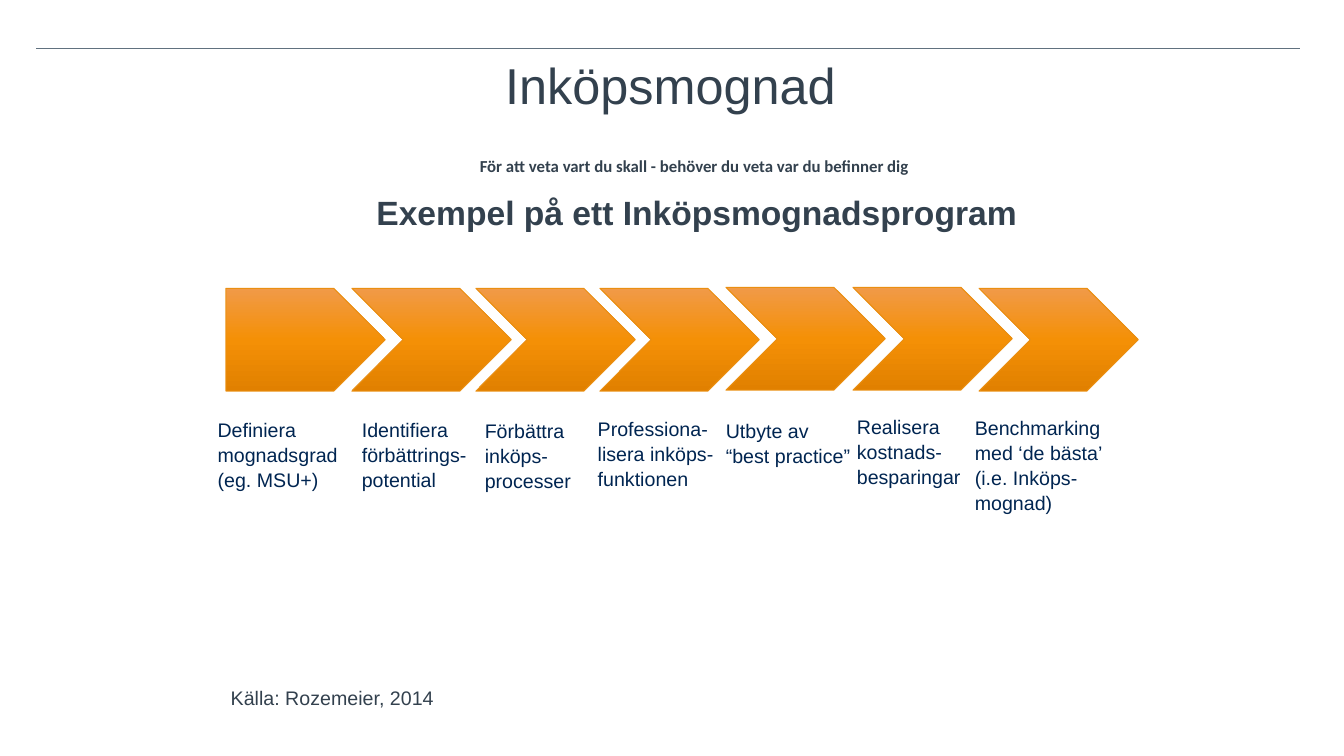
from copy import deepcopy
from dataclasses import dataclass

from pptx import Presentation
from pptx.dml.color import RGBColor
from pptx.enum.shapes import MSO_CONNECTOR, MSO_SHAPE
from pptx.enum.text import MSO_ANCHOR, PP_ALIGN
from pptx.oxml.ns import qn
from pptx.slide import Slide
from pptx.text.text import TextFrame
from pptx.util import Inches, Pt
from lxml.etree import SubElement


@dataclass(frozen=True)
class Theme:
    ink: str = "33414E"
    label: str = "002551"
    rule: str = "61717F"
    arrow_line: str = "EA8F12"
    arrow_stops: tuple[str, ...] = ("F19A48", "F49006", "E18000")
    font: str = "Arial"
    tagline_font: str = "Calibri"
    title_size: int = 36
    heading_size: int = 24
    body_size: int = 14
    tagline_size: int = 12
    hairline: float = 0.75


@dataclass(frozen=True)
class Box:
    left: float
    top: float
    width: float
    height: float

    def lengths(self) -> tuple[Inches, ...]:
        return tuple(Inches(n) for n in (self.left, self.top, self.width, self.height))


@dataclass(frozen=True)
class Style:
    size: int
    color: str
    font: str
    bold: bool = False
    align: PP_ALIGN = PP_ALIGN.LEFT
    spacing: float = 1.0


@dataclass(frozen=True)
class Step:
    arrow_left: float
    arrow_top: float
    label: str
    label_box: Box


THEME = Theme()
TITLE = Style(THEME.title_size, THEME.ink, THEME.font, align=PP_ALIGN.CENTER)
TAGLINE = Style(THEME.tagline_size, THEME.ink, THEME.tagline_font, bold=True)
HEADING = Style(THEME.heading_size, THEME.ink, THEME.font, True, PP_ALIGN.CENTER)
LABEL = Style(THEME.body_size, THEME.label, THEME.font, spacing=1.07)
SOURCE = Style(THEME.body_size, THEME.ink, THEME.font)

ARROW_WIDTH, ARROW_HEIGHT = 1.58, 1.02
STEPS = (
    Step(2.24, 2.86, "Definiera mognadsgrad (eg. MSU+)", Box(2.06, 4.08, 1.5, 1.11)),
    Step(3.49, 2.86, "Identifiera förbättrings-potential", Box(3.49, 4.08, 1.49, 0.86)),
    Step(4.72, 2.86, "Förbättra inköps-processer", Box(4.71, 4.09, 1.17, 0.86)),
    Step(5.95, 2.86, "Professiona- lisera inköps-funktionen", Box(5.83, 4.07, 1.46, 0.86)),
    Step(7.2, 2.85, "Utbyte av “best practice”", Box(7.1, 4.09, 1.49, 0.86)),
    Step(8.46, 2.85, "Realisera kostnads-besparingar", Box(8.4, 4.05, 1.29, 0.86)),
    Step(9.71, 2.86, "Benchmarking med ‘de bästa’ (i.e. Inköps-mognad)", Box(9.57, 4.06, 1.56, 1.11)),
)


def write(frame: TextFrame, text: str, style: Style) -> None:
    frame.word_wrap = True
    paragraph = frame.paragraphs[0]
    paragraph.alignment = style.align
    paragraph.line_spacing = style.spacing
    run = paragraph.add_run()
    run.text = text
    run.font.size = Pt(style.size)
    run.font.name = style.font
    run.font.bold = style.bold
    run.font.color.rgb = RGBColor.from_string(style.color)


def add_text(slide: Slide, box: Box, text: str, style: Style) -> None:
    write(slide.shapes.add_textbox(*box.lengths()).text_frame, text, style)


def add_title(slide: Slide, box: Box, text: str) -> None:
    title = slide.shapes.title
    title.left, title.top, title.width, title.height = box.lengths()
    title.text_frame.vertical_anchor = MSO_ANCHOR.MIDDLE
    write(title.text_frame, text, TITLE)


def add_rule(slide: Slide, left: float, right: float, top: float) -> None:
    rule = slide.shapes.add_connector(
        MSO_CONNECTOR.STRAIGHT, Inches(left), Inches(top), Inches(right), Inches(top))
    rule.line.color.rgb = RGBColor.from_string(THEME.rule)
    rule.line.width = Pt(THEME.hairline)
    SubElement(rule.element.spPr, qn("a:effectLst"))


def add_arrow(slide: Slide, step: Step, preset: MSO_SHAPE) -> None:
    box = Box(step.arrow_left, step.arrow_top, ARROW_WIDTH, ARROW_HEIGHT)
    arrow = slide.shapes.add_shape(preset, *box.lengths())
    arrow.shadow.inherit = False
    arrow.adjustments[0] = 0.5
    arrow.line.color.rgb = RGBColor.from_string(THEME.arrow_line)
    arrow.line.width = Pt(THEME.hairline)
    # Three even gradient stops, running from top to bottom
    arrow.fill.gradient()
    arrow.fill.gradient_angle = 270
    stop_list = arrow.element.spPr.find(f"{qn('a:gradFill')}/{qn('a:gsLst')}")
    stop_list.append(deepcopy(stop_list[0]))
    for index, (stop, color) in enumerate(zip(arrow.fill.gradient_stops, THEME.arrow_stops)):
        stop.position = index / (len(THEME.arrow_stops) - 1)
        stop.color.rgb = RGBColor.from_string(color)


def main() -> None:
    deck = Presentation()
    deck.slide_width, deck.slide_height = Inches(13.33), Inches(7.5)
    slide = deck.slides.add_slide(deck.slide_layouts[5])

    # Heading area
    add_rule(slide, 0.36, 12.89, 0.48)
    add_title(slide, Box(2.24, 0.26, 8.82, 1.15), "Inköpsmognad")
    add_text(slide, Box(4.66, 1.5, 4.71, 0.3),
             "För att veta vart du skall - behöver du veta var du befinner dig", TAGLINE)
    add_text(slide, Box(3.33, 1.85, 7.16, 0.5), "Exempel på ett Inköpsmognadsprogram", HEADING)

    # Process steps with their labels
    for index, step in enumerate(STEPS):
        add_arrow(slide, step, MSO_SHAPE.CHEVRON if index else MSO_SHAPE.PENTAGON)
        add_text(slide, step.label_box, step.label, LABEL)

    # Source line
    add_text(slide, Box(2.19, 6.76, 2.64, 0.34), "Källa: Rozemeier, 2014", SOURCE)

    deck.save("out.pptx")


if __name__ == "__main__":
    main()
